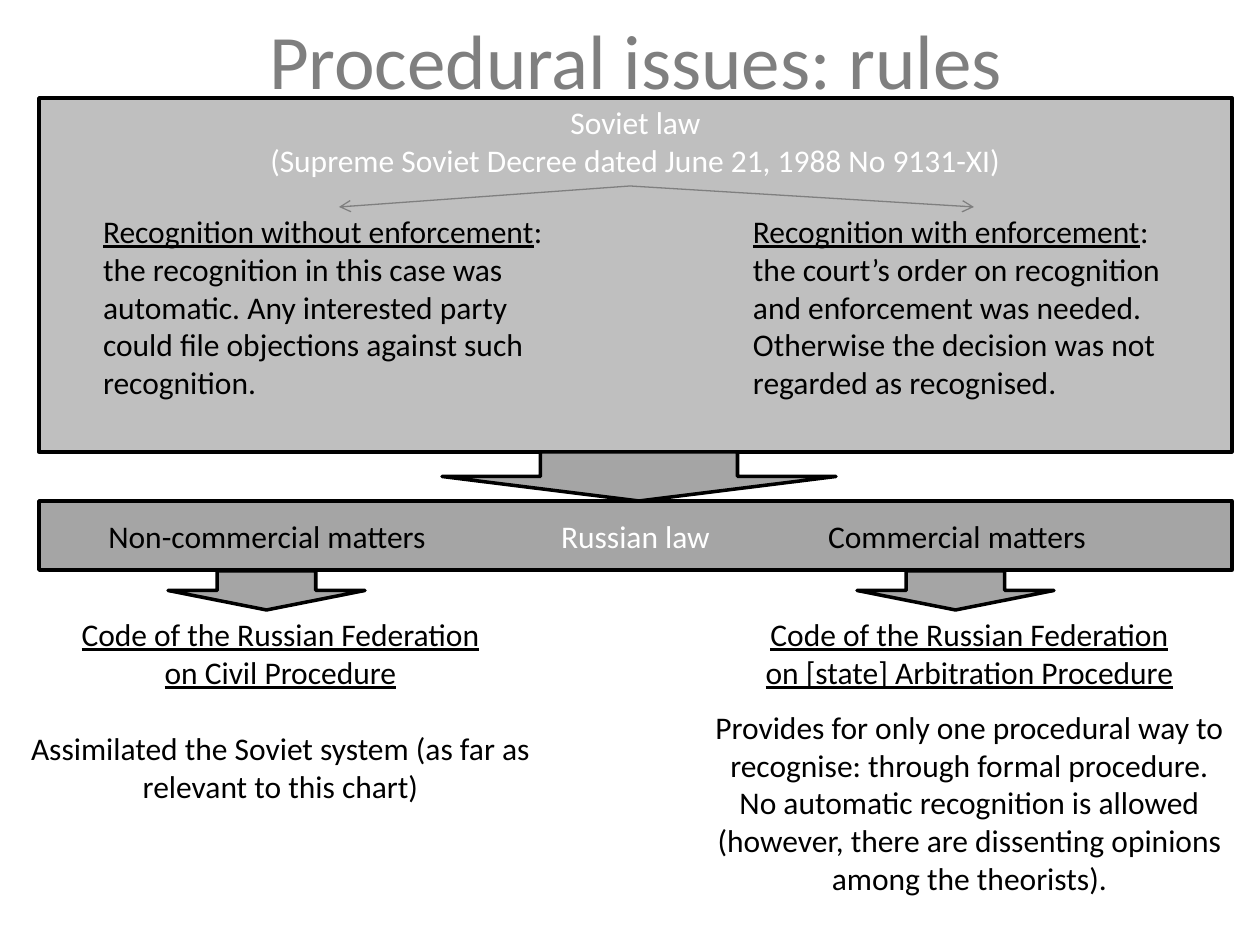
from lxml import etree
from pptx import Presentation
from pptx.dml.color import RGBColor
from pptx.enum.shapes import MSO_CONNECTOR, MSO_SHAPE
from pptx.enum.text import MSO_ANCHOR, PP_ALIGN
from pptx.oxml.ns import qn
from pptx.util import Emu, Pt

RECT = MSO_SHAPE.RECTANGLE
DOWN = MSO_SHAPE.DOWN_ARROW
STRAIGHT = MSO_CONNECTOR.STRAIGHT
TOP, MIDDLE = MSO_ANCHOR.TOP, MSO_ANCHOR.MIDDLE
LEFT, CENTER = PP_ALIGN.LEFT, PP_ALIGN.CENTER

FONT = "Calibri"
BLACK, WHITE = "000000", "FFFFFF"
DARK, MID, LIGHT = "7F7F7F", "A5A5A5", "BFBFBF"
INSET = 5


def px(n):
    return Emu(round(n * 914400 / 126))


def color(code):
    return RGBColor.from_string(code)


def write(shape, paras, size=18, ink=BLACK, align=CENTER, anchor=TOP, gap=0):
    """Fill shape with (underlined, plain) pairs; gap is points before the last."""
    frame = shape.text_frame
    frame.word_wrap = True
    frame.vertical_anchor = anchor
    frame.margin_left = frame.margin_right = px(INSET)
    frame.margin_top = frame.margin_bottom = px(INSET)
    for i, pair in enumerate(paras):
        para = frame.add_paragraph() if i else frame.paragraphs[0]
        para.alignment = align
        for text, under in zip(pair, (True, False)):
            if text:
                run = para.add_run()
                run.text = text
                font = run.font
                font.name, font.size, font.underline = FONT, Pt(size), under
                font.color.rgb = color(ink)
    if gap:
        para.space_before = Pt(gap)


def label(slide, box, paras, **style):
    write(slide.shapes.add_textbox(*map(px, box)), paras, **style)


def block(slide, kind, box, fill):
    shape = slide.shapes.add_shape(kind, *map(px, box))
    shape.shadow.inherit = False
    shape.fill.solid()
    shape.fill.fore_color.rgb = color(fill)
    shape.line.color.rgb = color(BLACK)
    shape.line.width = Pt(2)
    return shape


def pointer(slide, start, end):
    link = slide.shapes.add_connector(STRAIGHT, *map(px, start + end))
    link.line.color.rgb = color(DARK)
    link.line.width = Pt(0.75)
    etree.SubElement(link.line._get_or_add_ln(), qn("a:tailEnd"), type="arrow")
    etree.SubElement(link._element.spPr, qn("a:effectLst"))


def soviet(slide):
    panel = block(slide, RECT, (39, 98, 1193, 354), LIGHT)
    write(panel, [
        ("", "Soviet law"),
        ("", "(Supreme Soviet Decree dated June 21, 1988 No 9131-XI)"),
    ], ink=WHITE)
    label(slide, (98, 207, 484, 203), [
        ("Recognition without enforcement",
         ": the recognition in this case was automatic. Any interested party "
         "could file objections against such recognition."),
    ], align=LEFT)
    label(slide, (748, 207, 455, 203), [
        ("Recognition with enforcement", ":"),
        ("", "the court’s order on recognition and enforcement was needed. "
             "Otherwise the decision was not regarded as recognised."),
    ], align=LEFT)
    for x in (339, 974):
        pointer(slide, (630, 186), (x, 207))


def russian(slide):
    block(slide, DOWN, (442, 452, 394, 49), MID)
    bar = block(slide, RECT, (39, 501, 1193, 69), MID)
    write(bar, [("", "Russian law")], ink=WHITE, anchor=MIDDLE)
    for x in (168, 857):
        block(slide, DOWN, (x, 571, 197, 39), MID)
    label(slide, (49, 512, 436, 49), [("", "Non-commercial matters")])
    label(slide, (759, 512, 396, 49), [("", "Commercial matters")])


def codes(slide):
    head = ("Code of the Russian Federation", "")
    label(slide, (19, 610, 523, 203), [
        head,
        ("on Civil Procedure", ""),
        ("", "Assimilated the Soviet system (as far as relevant to this chart)"),
    ], gap=22)
    label(slide, (708, 610, 523, 297), [
        head,
        ("on [state] Arbitration Procedure", ""),
        ("", "Provides for only one procedural way to recognise: through formal "
             "procedure. No automatic recognition is allowed (however, there are "
             "dissenting opinions among the theorists)."),
    ], gap=9.8)


def main():
    deck = Presentation()
    deck.slide_width, deck.slide_height = px(1260), px(945)
    slide = deck.slides.add_slide(deck.slide_layouts[6])
    label(slide, (69, 0, 1134, 118), [("", "Procedural issues: rules")],
          size=44, ink=DARK, anchor=MIDDLE)
    soviet(slide)
    russian(slide)
    codes(slide)
    deck.save("out.pptx")


if __name__ == "__main__":
    main()
